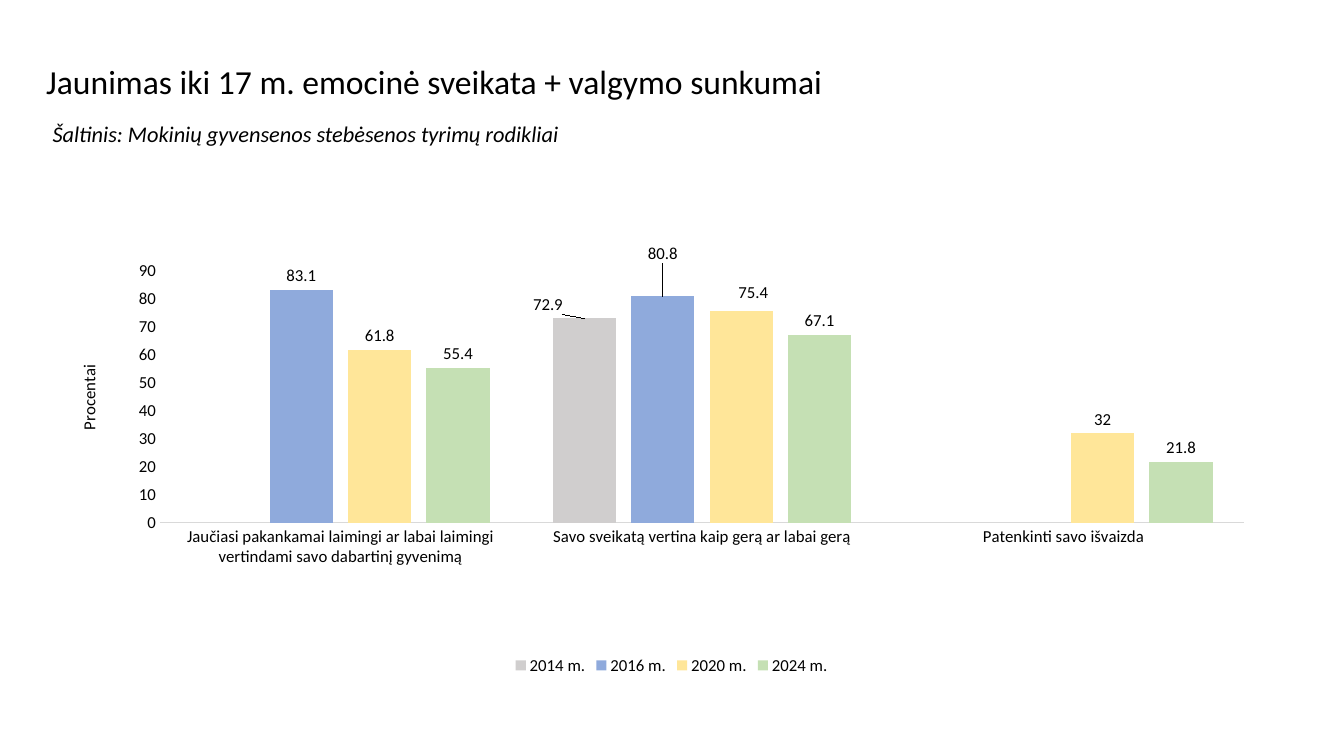
from lxml.etree import SubElement
from pptx import Presentation
from pptx.chart.data import CategoryChartData
from pptx.dml.color import RGBColor
from pptx.enum.chart import XL_CHART_TYPE, XL_LABEL_POSITION, XL_LEGEND_POSITION, XL_TICK_MARK
from pptx.enum.text import MSO_ANCHOR, PP_ALIGN
from pptx.oxml import parse_xml
from pptx.oxml.ns import nsdecls, qn
from pptx.util import Cm, Pt

BLACK = RGBColor(0x00, 0x00, 0x00)
AXIS_GREY = RGBColor(0xD9, 0xD9, 0xD9)

TITLE = "Jaunimas iki 17 m. emocinė sveikata + valgymo sunkumai"
SOURCE = "Šaltinis: Mokinių gyvensenos stebėsenos tyrimų rodikliai"
VALUE_TITLE = "Procentai"
CATEGORIES = [
    "Jaučiasi pakankamai laimingi ar labai laimingi vertindami savo dabartinį gyvenimą",
    "Savo sveikatą vertina kaip gerą ar labai gerą",
    "Patenkinti savo išvaizda",
]
SERIES = [
    ("2014 m.", (None, 72.9, None), RGBColor(0xD0, 0xCE, 0xCE)),
    ("2016 m.", (83.1, 80.8, None), RGBColor(0x8F, 0xAA, 0xDC)),
    ("2020 m.", (61.8, 75.4, 32), RGBColor(0xFF, 0xE6, 0x99)),
    ("2024 m.", (55.4, 67.1, 21.8), RGBColor(0xC5, 0xE0, 0xB4)),
]
MOVED_CATEGORY = 1
LABEL_SHIFTS = {"2014 m.": (-0.03, 0), "2016 m.": (0, -0.06), "2020 m.": (0.01, -0.01)}


def style_font(font, size=12, italic=False):
    font.name = "Calibri"
    font.size = Pt(size)
    font.bold = False
    font.italic = italic
    font.color.rgb = BLACK


def write_text(frame, text, size=12, italic=False, bullets=True):
    para = frame.paragraphs[0]
    para.alignment = PP_ALIGN.LEFT
    para.line_spacing = 0.9
    para.space_before = Pt(0)
    if not bullets:
        properties = para._p.get_or_add_pPr()
        properties.set("marL", "0")
        properties.set("indent", "0")
        SubElement(properties, qn("a:buNone"))
    span = para.add_run()
    span.text = text
    style_font(span.font, size, italic)
    frame.word_wrap = True
    frame.vertical_anchor = MSO_ANCHOR.MIDDLE


def place(box, left, top, width, height):
    box.left, box.top, box.width, box.height = Cm(left), Cm(top), Cm(width), Cm(height)


def manual_layout(**settings):
    parts = "".join(f'<c:{name} val="{value}"/>' for name, value in settings.items())
    return parse_xml(
        f'<c:layout {nsdecls("c")}><c:manualLayout>{parts}</c:manualLayout></c:layout>'
    )


def set_layout(parent, anchor, layout):
    for old in parent.findall(qn("c:layout")):
        parent.remove(old)
    if anchor is None:
        parent.insert(0, layout)
    else:
        anchor.addnext(layout)


def format_axes(chart):
    for axis in (chart.category_axis, chart.value_axis):
        axis.major_tick_mark = axis.minor_tick_mark = XL_TICK_MARK.NONE
        axis.has_major_gridlines = False
        style_font(axis.tick_labels.font)
    line = chart.category_axis.format.line
    line.color.rgb = AXIS_GREY
    line.width = Pt(0.75)
    value_axis = chart.value_axis
    value_axis.format.line.fill.background()
    value_axis.minimum_scale, value_axis.maximum_scale = 0, 90
    value_axis.major_unit = 10
    frame = value_axis.axis_title.text_frame
    frame.text = VALUE_TITLE
    style_font(frame.paragraphs[0].runs[0].font)
    body = frame._txBody.find(qn("a:bodyPr"))
    body.set("rot", "-5400000")
    body.set("vert", "horz")
    title = value_axis.axis_title._element
    set_layout(title, title.find(qn("c:tx")),
               manual_layout(xMode="edge", yMode="edge", x=0.01, y=0.34))


def format_series(series, color):
    series.format.fill.solid()
    series.format.fill.fore_color.rgb = color
    labels = series.data_labels
    labels.show_value = True
    labels.position = XL_LABEL_POSITION.OUTSIDE_END
    style_font(labels.font)
    if series.name in LABEL_SHIFTS:
        label = series.points[MOVED_CATEGORY].data_label
        label.position = XL_LABEL_POSITION.OUTSIDE_END
        style_font(label.font)
        x, y = LABEL_SHIFTS[series.name]
        index = series._element.xpath(".//c:dLbl/c:idx")[0]
        set_layout(index.getparent(), index, manual_layout(x=x, y=y))


def add_bars(page):
    data = CategoryChartData()
    data.categories = CATEGORIES
    for name, values, color in SERIES:
        data.add_series(name, values)
    chart = page.shapes.add_chart(
        XL_CHART_TYPE.COLUMN_CLUSTERED, Cm(1.57), Cm(5), Cm(30.71), Cm(12.12), data
    ).chart
    style_font(chart.font, 10)
    chart.has_title = False
    chart.has_legend = True
    chart.legend.position = XL_LEGEND_POSITION.BOTTOM
    chart.legend.include_in_layout = False
    style_font(chart.legend.font)
    plot = chart.plots[0]
    plot.gap_width, plot.overlap = 100, -24
    plot.vary_by_categories = False
    format_axes(chart)
    for series, (name, values, color) in zip(plot.series, SERIES):
        format_series(series, color)
    area = chart._chartSpace.xpath(".//c:plotArea")[0]
    set_layout(area, None, manual_layout(
        layoutTarget="inner", xMode="edge", yMode="edge", x=0.08, y=0.15, w=0.89, h=0.525))


def main():
    deck = Presentation()
    deck.slide_width, deck.slide_height = Cm(33.87), Cm(19.05)
    page = deck.slides.add_slide(deck.slide_layouts[1])
    title, source = page.shapes.title, page.placeholders[1]
    place(title, 0.91, 0.61, 20.4, 3)
    write_text(title.text_frame, TITLE, size=24)
    add_bars(page)
    place(source, 1.07, 2.97, 30.38, 0.86)
    write_text(source.text_frame, SOURCE, size=16, italic=True, bullets=False)
    deck.save("out.pptx")


if __name__ == "__main__":
    main()
